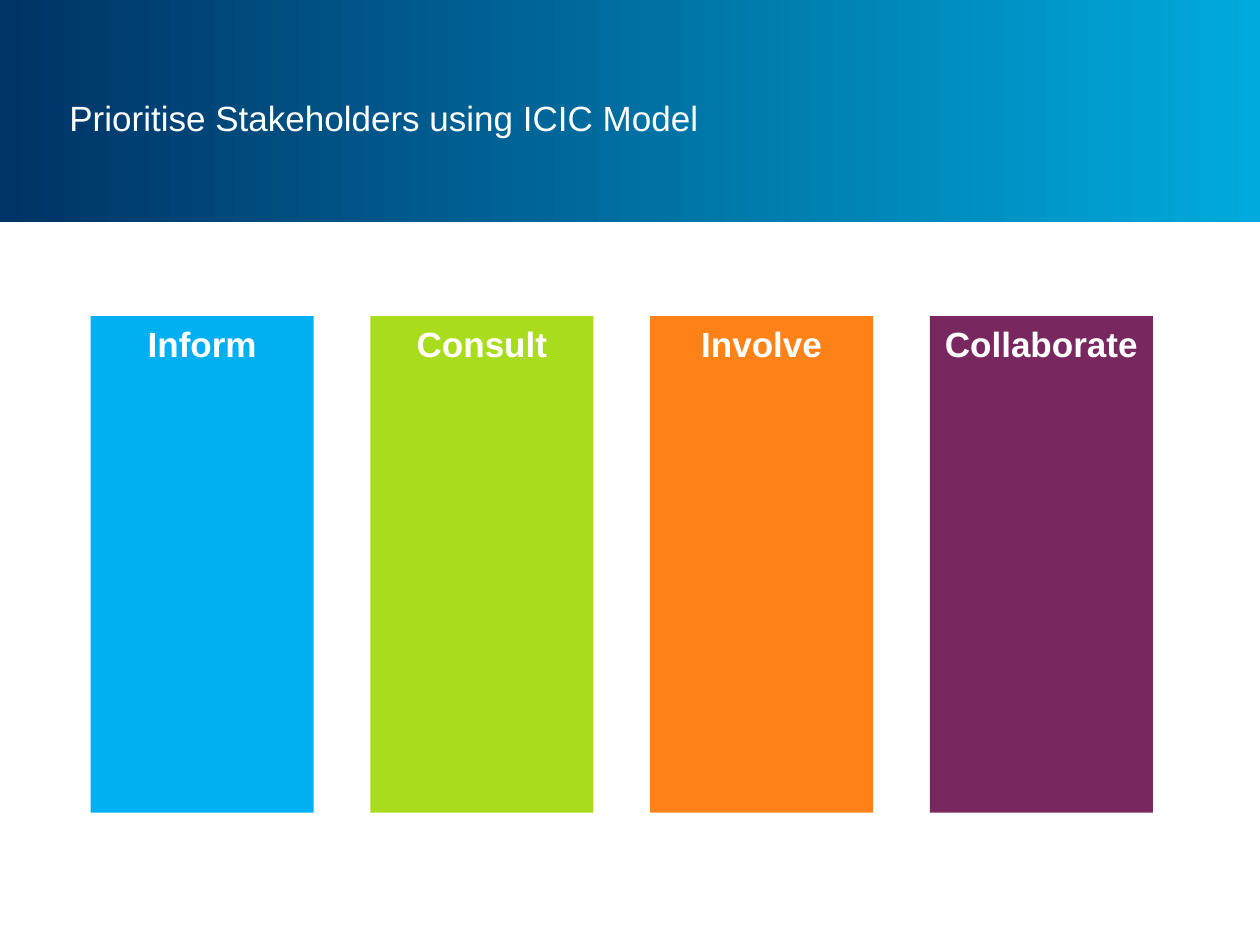
from dataclasses import dataclass

from pptx import Presentation
from pptx.dml.color import RGBColor
from pptx.enum.shapes import MSO_SHAPE
from pptx.enum.text import MSO_ANCHOR, PP_ALIGN
from pptx.util import Inches, Pt

RECT = MSO_SHAPE.RECTANGLE
TOP, MIDDLE = MSO_ANCHOR.TOP, MSO_ANCHOR.MIDDLE
LEFT, CENTER = PP_ALIGN.LEFT, PP_ALIGN.CENTER
TITLE_ONLY = 5


@dataclass(frozen=True)
class Theme:
    font: str = "Arial"
    size: int = 20
    text: str = "FFFFFF"
    navy: str = "003366"
    cyan: str = "00AADC"
    bars: tuple = ("00B0F0", "AADC1E", "FF8219", "78285F")


THEME = Theme()
LEVELS = ("Inform", "Consult", "Involve", "Collaborate")


def style(item, values):
    for name, value in values.items():
        setattr(item, name, value)


def write(shape, text, align, bold, frame):
    shape.text_frame.text = text
    style(shape.text_frame, {"word_wrap": True, **frame})
    para = shape.text_frame.paragraphs[0]
    para.alignment = align
    font = para.runs[0].font
    style(font, {"name": THEME.font, "size": Pt(THEME.size), "bold": bold})
    font.color.rgb = RGBColor.from_string(THEME.text)


def add_block(slide, box):
    block = slide.shapes.add_shape(RECT, *map(Inches, box))
    block.shadow.inherit = False
    block.line.fill.background()
    return block


def add_header(slide, box):
    left, top, width, height = box
    # Gradient band, sent behind the title
    band = add_block(slide, box)
    band.fill.gradient()
    band.fill.gradient_angle = 0
    for stop, color in zip(band.fill.gradient_stops, (THEME.navy, THEME.cyan)):
        stop.color.rgb = RGBColor.from_string(color)
    slide.shapes._spTree.insert(2, band._element)

    # Title
    title = slide.shapes.title
    style(title, {"left": Inches(left + 0.51), "top": Inches(top + 0.3),
                  "width": Inches(width - 2.52), "height": Inches(height - 0.5)})
    sides = ("left", "top", "right", "bottom")
    frame = {f"margin_{side}": Inches(0.04) for side in sides}
    write(title, "Prioritise Stakeholders using ICIC Model", LEFT, False,
          {"vertical_anchor": MIDDLE, **frame})


def add_bars(slide, box, gap):
    left, top, width, height = box
    wide = (width - gap * (len(LEVELS) - 1)) / len(LEVELS)
    for i, (name, color) in enumerate(zip(LEVELS, THEME.bars)):
        bar = add_block(slide, (left + i * (wide + gap), top, wide, height))
        bar.fill.solid()
        bar.fill.fore_color.rgb = RGBColor.from_string(color)
        write(bar, name, CENTER, True, {"vertical_anchor": TOP})


def main():
    deck = Presentation()
    style(deck, {"slide_width": Inches(10), "slide_height": Inches(7.5)})
    slide = deck.slides.add_slide(deck.slide_layouts[TITLE_ONLY])
    add_header(slide, (0, 0, 10, 1.76))
    add_bars(slide, (0.72, 2.51, 8.43, 3.94), gap=0.45)
    deck.save("out.pptx")


if __name__ == "__main__":
    main()
